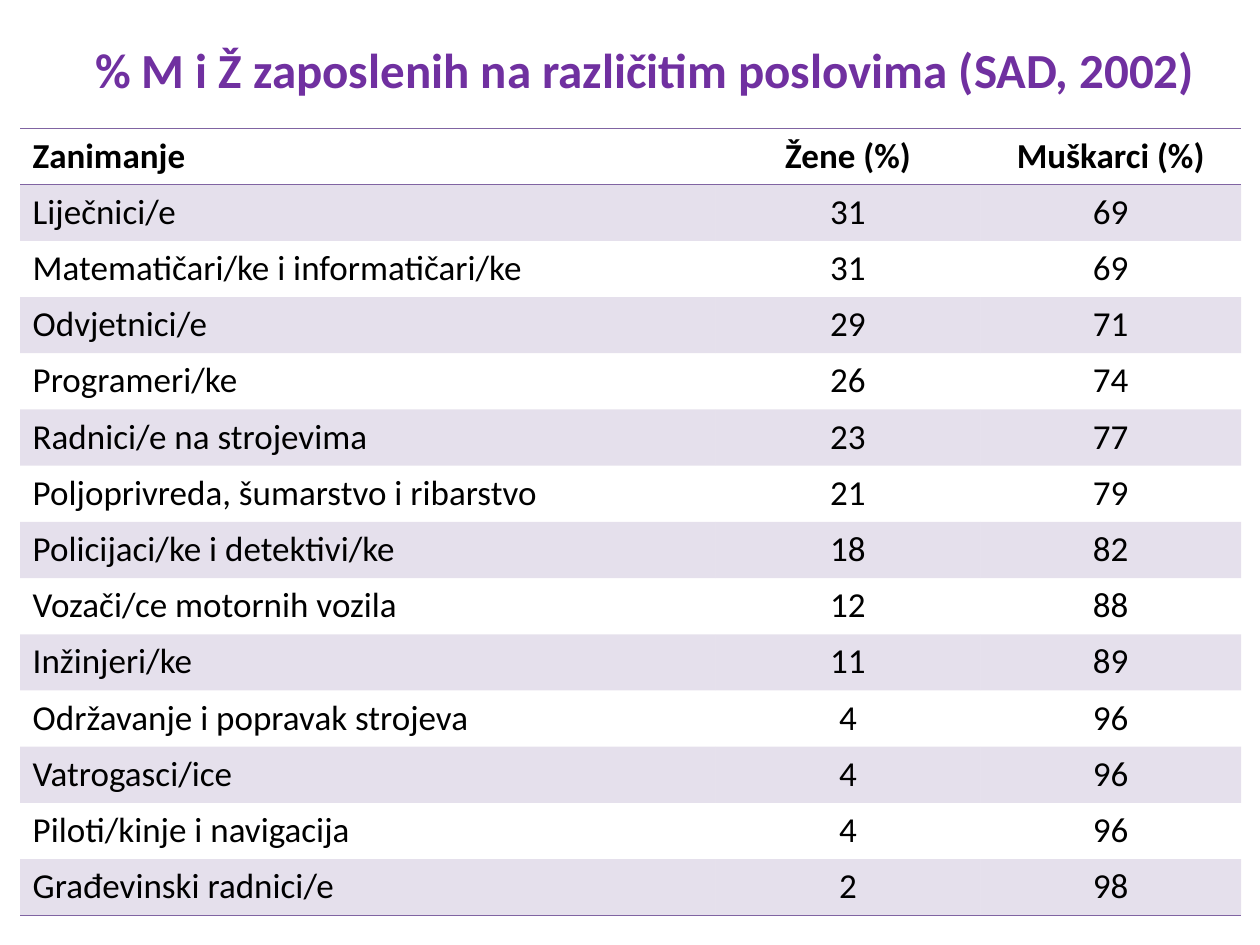
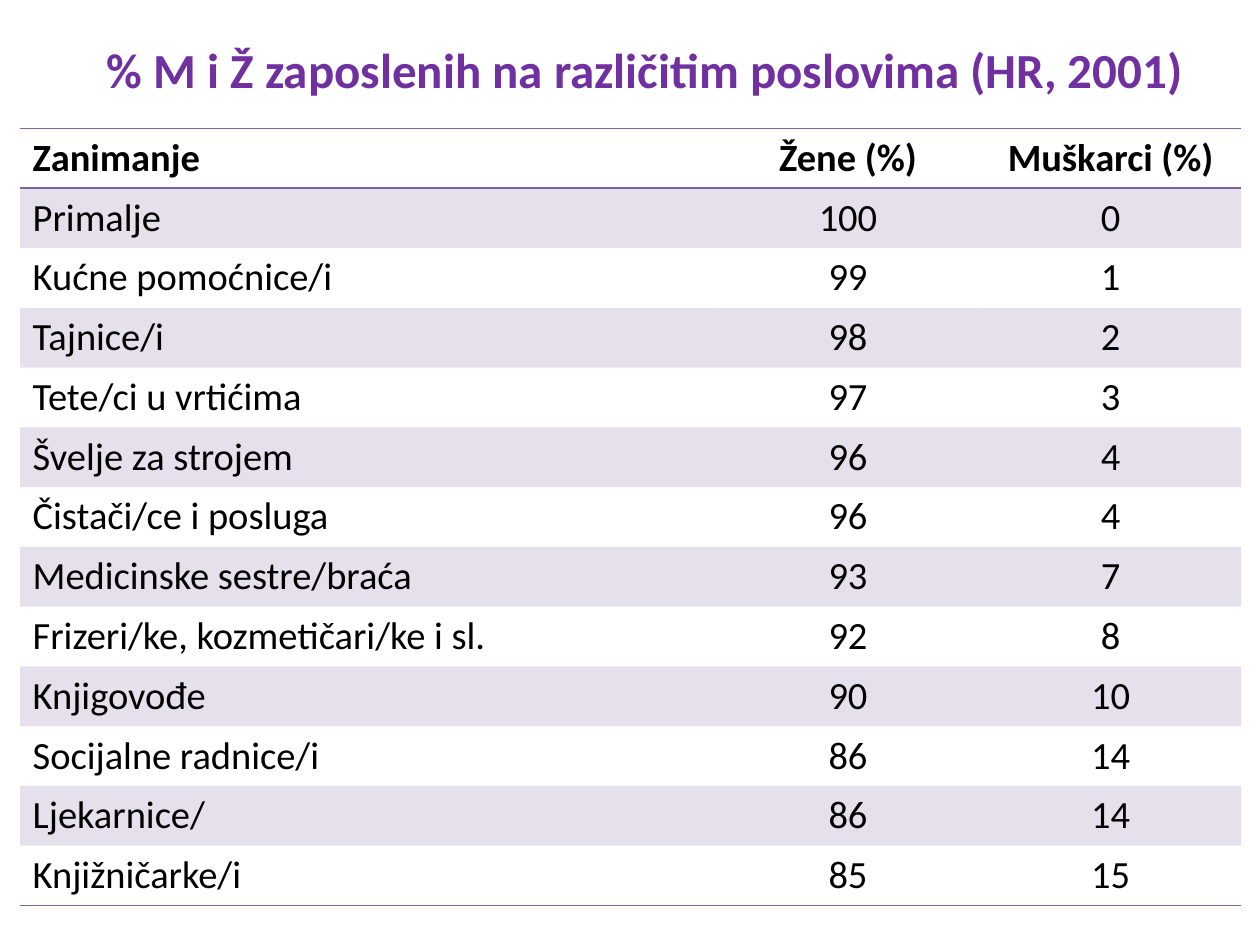
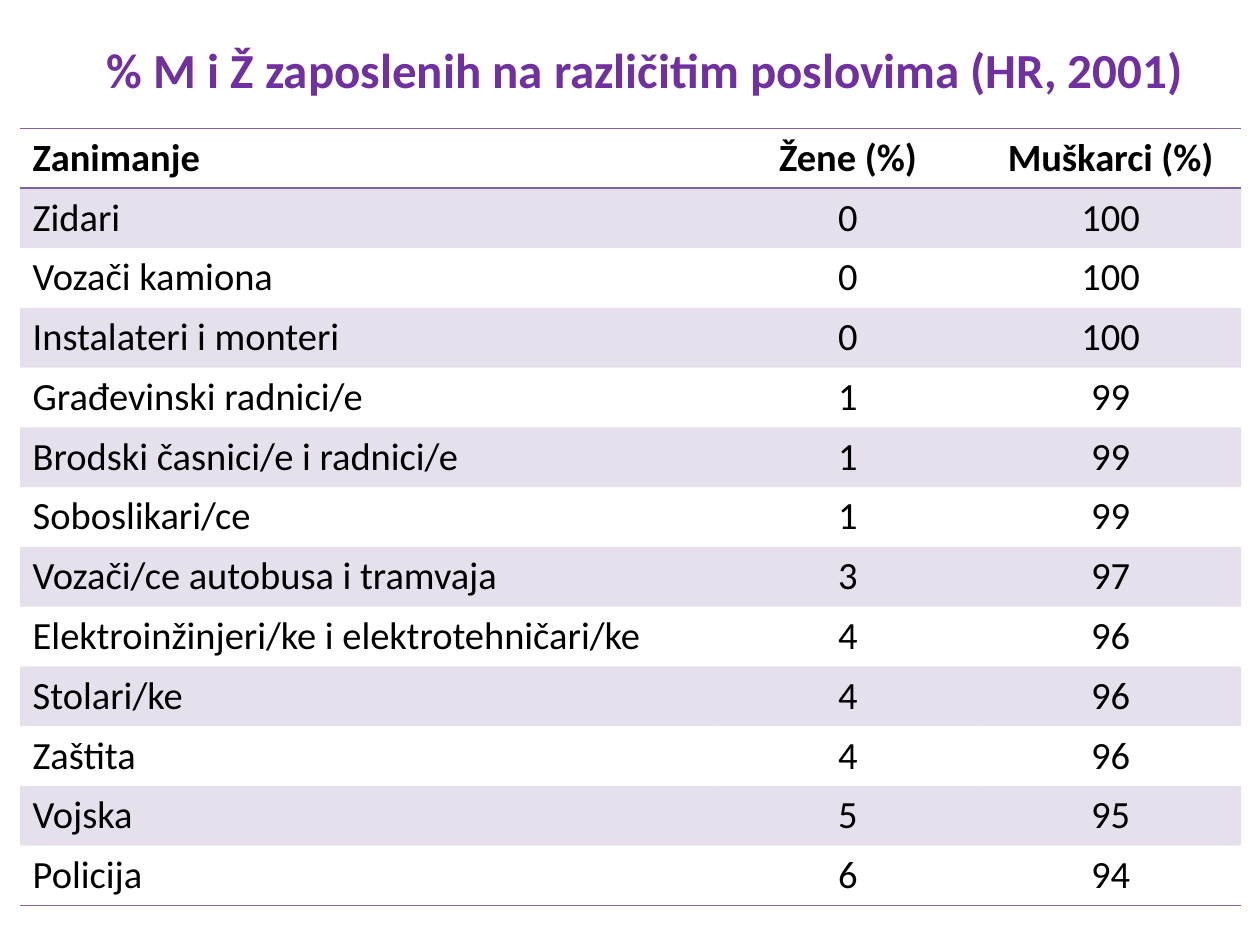
from dataclasses import dataclass

from lxml import etree
from pptx import Presentation
from pptx import util as u
from pptx.dml import color
from pptx.enum import text
from pptx.oxml import ns

HEADINGS = ("Zanimanje", "Žene (%)", "Muškarci (%)")

PAGES = [
    {
        "title": "% M i Ž zaposlenih na različitim poslovima (SAD, 2002)",
        "size": 20,
        "height": 450,
        "jobs": [
            ("Liječnici/e", 31, 69),
            ("Matematičari/ke i informatičari/ke", 31, 69),
            ("Odvjetnici/e", 29, 71),
            ("Programeri/ke", 26, 74),
            ("Radnici/e na strojevima", 23, 77),
            ("Poljoprivreda, šumarstvo i ribarstvo", 21, 79),
            ("Policijaci/ke i detektivi/ke", 18, 82),
            ("Vozači/ce motornih vozila", 12, 88),
            ("Inžinjeri/ke", 11, 89),
            ("Održavanje i popravak strojeva", 4, 96),
            ("Vatrogasci/ice", 4, 96),
            ("Piloti/kinje i navigacija", 4, 96),
            ("Građevinski radnici/e", 2, 98),
        ],
    },
    {
        "title": "% M i Ž zaposlenih na različitim poslovima (HR, 2001)",
        "size": 22,
        "height": 444.3,
        "jobs": [
            ("Primalje", 100, 0),
            ("Kućne pomoćnice/i", 99, 1),
            ("Tajnice/i", 98, 2),
            ("Tete/ci u vrtićima", 97, 3),
            ("Švelje za strojem", 96, 4),
            ("Čistači/ce i posluga", 96, 4),
            ("Medicinske sestre/braća", 93, 7),
            ("Frizeri/ke, kozmetičari/ke i sl.", 92, 8),
            ("Knjigovođe", 90, 10),
            ("Socijalne radnice/i", 86, 14),
            ("Ljekarnice/", 86, 14),
            ("Knjižničarke/i", 85, 15),
        ],
    },
    {
        "title": "% M i Ž zaposlenih na različitim poslovima (HR, 2001)",
        "size": 22,
        "height": 444.3,
        "jobs": [
            ("Zidari", 0, 100),
            ("Vozači kamiona", 0, 100),
            ("Instalateri i monteri", 0, 100),
            ("Građevinski radnici/e", 1, 99),
            ("Brodski časnici/e i radnici/e", 1, 99),
            ("Soboslikari/ce", 1, 99),
            ("Vozači/ce autobusa i tramvaja", 3, 97),
            ("Elektroinžinjeri/ke i elektrotehničari/ke", 4, 96),
            ("Stolari/ke", 4, 96),
            ("Zaštita", 4, 96),
            ("Vojska", 5, 95),
            ("Policija", 6, 94),
        ],
    },
]


@dataclass(frozen=True)
class Theme:
    font: str = "Calibri"
    title_color: str = "7030A0"
    text_color: str = "000000"
    accent: str = "8064A2"
    title_size: int = 28
    band_opacity: int = 20
    rule_width: int = 1
    plain_style: str = "{2D5ABB26-0587-4C30-8999-92F81FD0307C}"


THEME = Theme()
TITLE_BOX = (16.6, -5.8, 703.4, 90)
TABLE_LEFT, TABLE_TOP = 11.5, 73.4
COLUMN_WIDTHS = (397.5, 151.2, 149)


def write(frame, words, *, size, ink=THEME.text_color, bold=False, centred=False):
    para = frame.paragraphs[0]
    para.alignment = text.PP_ALIGN.CENTER if centred else text.PP_ALIGN.LEFT
    span = para.add_run()
    span.text = words
    span.font.name = THEME.font
    span.font.size = u.Pt(size)
    span.font.bold = bold
    span.font.color.rgb = color.RGBColor.from_string(ink)


def add_title(page, words):
    box = page.shapes.add_textbox(*map(u.Pt, TITLE_BOX))
    box.text_frame.word_wrap = True
    box.text_frame.vertical_anchor = text.MSO_ANCHOR.MIDDLE
    write(box.text_frame, words, size=THEME.title_size, ink=THEME.title_color,
          bold=True, centred=True)


def rule_cell(cell, edge):
    line = etree.Element(ns.qn(f"a:ln{edge}"), w=str(u.Pt(THEME.rule_width)))
    fill = etree.SubElement(line, ns.qn("a:solidFill"))
    etree.SubElement(fill, ns.qn("a:srgbClr"), val=THEME.accent)
    cell._tc.get_or_add_tcPr().insert(0, line)


def fill_cell(cell, banded):
    if not banded:
        cell.fill.background()
        return
    cell.fill.solid()
    cell.fill.fore_color.rgb = color.RGBColor.from_string(THEME.accent)
    tint = cell._tc.tcPr.find(".//" + ns.qn("a:srgbClr"))
    etree.SubElement(tint, ns.qn("a:alpha"), val=str(THEME.band_opacity * 1000))


def add_jobs_table(page, jobs, size, height):
    rows = [HEADINGS, *jobs]
    table = page.shapes.add_table(
        len(rows), len(HEADINGS), u.Pt(TABLE_LEFT), u.Pt(TABLE_TOP),
        u.Pt(sum(COLUMN_WIDTHS)), u.Pt(height)).table
    table.horz_banding = False
    table._tbl.tblPr.find(ns.qn("a:tableStyleId")).text = THEME.plain_style
    for column, width in zip(table.columns, COLUMN_WIDTHS):
        column.width = u.Pt(width)
    for index, values in enumerate(rows):
        table.rows[index].height = u.Pt(height / len(rows))
        for place, value in enumerate(values):
            cell = table.cell(index, place)
            write(cell.text_frame, str(value), size=size, bold=index == 0,
                  centred=place > 0)
            fill_cell(cell, banded=index % 2 == 1)
            if index in (0, len(rows) - 1):
                rule_cell(cell, "B")
            if index == 0:
                rule_cell(cell, "T")


def main():
    deck = Presentation()
    deck.slide_width, deck.slide_height = u.Pt(720), u.Pt(540)
    for content in PAGES:
        page = deck.slides.add_slide(deck.slide_layouts[6])
        add_title(page, content["title"])
        add_jobs_table(page, content["jobs"], content["size"], content["height"])
    deck.save("out.pptx")


if __name__ == "__main__":
    main()
